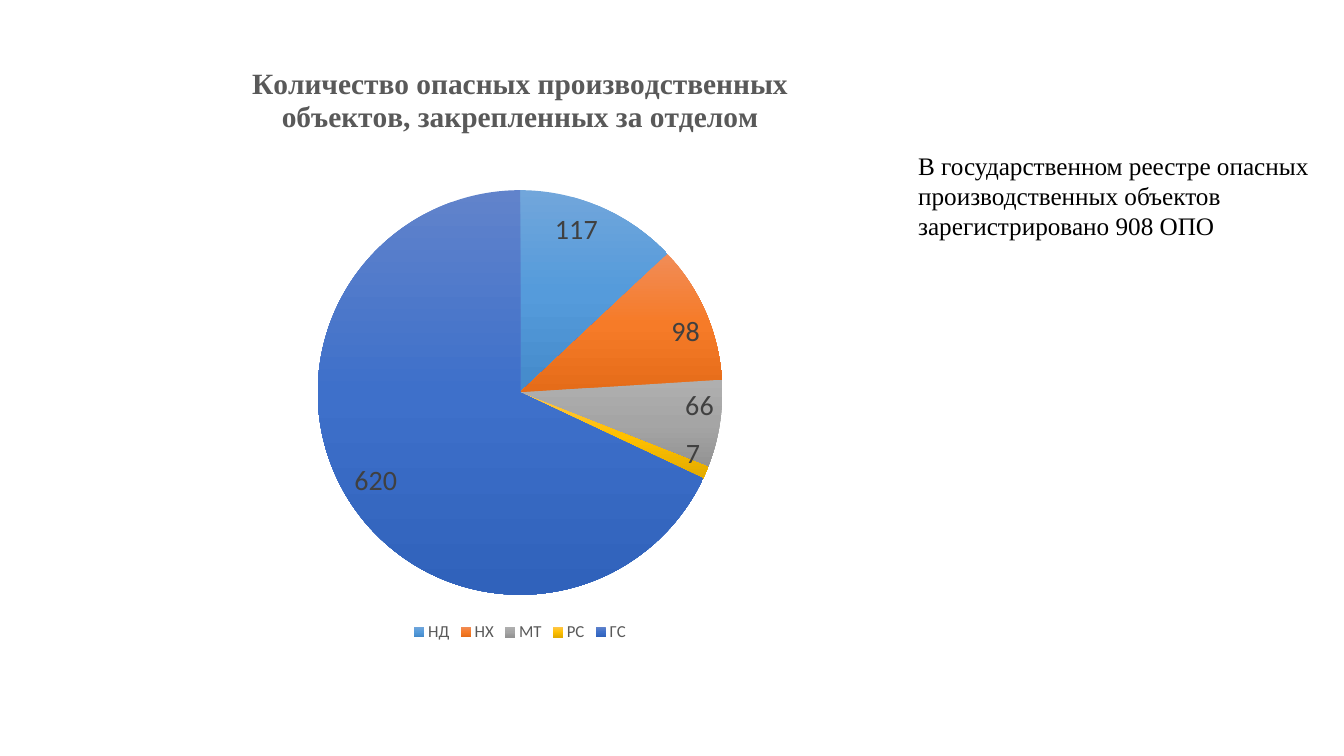
from dataclasses import dataclass

from lxml import etree
from pptx import Presentation
from pptx.chart.chart import Chart
from pptx.chart.data import CategoryChartData
from pptx.dml.color import RGBColor
from pptx.enum import chart as charts
from pptx.oxml import parse_xml
from pptx.oxml.ns import nsdecls, qn
from pptx.slide import Slide
from pptx.util import Pt


@dataclass(frozen=True)
class Theme:
    heading_font: str = "Times New Roman"
    chart_font: str = "Calibri"
    ink: str = "000000"
    muted: str = "595959"
    label: str = "404040"
    title_size: float = 21
    note_size: float = 18
    label_size: float = 20
    legend_size: float = 12


@dataclass(frozen=True)
class Sector:
    name: str
    share: int
    count: str
    gradient: tuple[str, str, str]


THEME = Theme()
TITLE = "Количество опасных производственных объектов, закрепленных за отделом"
NOTE = (
    "В государственном реестре опасных\n"
    "производственных объектов\n"
    "зарегистрировано 908 ОПО"
)
SECTORS = [
    Sector("НД", 13, "117", ("71A6DB", "559BDB", "448ACA")),
    Sector("НХ", 11, "98", ("F18C57", "F67B28", "E56C19")),
    Sector("МТ", 7, "66", ("AFAFAF", "A5A5A5", "939393")),
    Sector("РС", 1, "7", ("FFC64B", "FFC000", "E3AB00")),
    Sector("ГС", 68, "620", ("6183CB", "3E70CA", "3062BB")),
]


def style_font(font, name: str, size: float, color: str, bold: bool = False) -> None:
    font.name = name
    font.size = Pt(size)
    font.bold = bold
    font.color.rgb = RGBColor.from_string(color)


def fill_gradient(point, colors: tuple[str, str, str]) -> None:
    """Fill a sector from top to bottom with evenly spaced colour stops."""
    point.format.line.fill.background()
    point.format.fill.gradient()
    point.format.fill.gradient_angle = 270
    stops = point.format.fill._fill._gradFill.find(qn("a:gsLst"))
    for stop in list(stops):
        stops.remove(stop)
    for index, color in enumerate(colors):
        stop = etree.SubElement(stops, qn("a:gs"), pos=str(index * 50000))
        etree.SubElement(stop, qn("a:srgbClr"), val=color)


def place_plot(chart: Chart, x: float, y: float, w: float, h: float) -> None:
    """Fix the pie's area, in fractions of the chart."""
    plot_area = chart._chartSpace.chart.plotArea
    for layout in plot_area.findall(qn("c:layout")):
        plot_area.remove(layout)
    sizes = "".join(
        f'<c:{tag} val="{value}"/>' for tag, value in zip("xywh", (x, y, w, h))
    )
    plot_area.insert(0, parse_xml(
        f'<c:layout {nsdecls("c")}><c:manualLayout><c:layoutTarget val="inner"/>'
        f'<c:xMode val="edge"/><c:yMode val="edge"/>{sizes}'
        "</c:manualLayout></c:layout>"
    ))


def add_pie(page: Slide) -> None:
    data = CategoryChartData()
    data.categories = [sector.name for sector in SECTORS]
    data.add_series("Series 1", [sector.share for sector in SECTORS])
    chart = page.shapes.add_chart(
        charts.XL_CHART_TYPE.PIE, Pt(70.5), Pt(30.25), Pt(602), Pt(431.25), data
    ).chart
    style_font(chart.font, THEME.chart_font, 10, THEME.ink)

    chart.has_title = True
    title = chart.chart_title.text_frame
    title.text = TITLE
    style_font(title.paragraphs[0].runs[0].font, THEME.heading_font,
               THEME.title_size, THEME.muted, bold=True)
    chart.chart_title.include_in_layout = False

    chart.has_legend = True
    chart.legend.position = charts.XL_LEGEND_POSITION.BOTTOM
    chart.legend.include_in_layout = False
    style_font(chart.legend.font, THEME.chart_font, THEME.legend_size, THEME.muted)

    plot = chart.plots[0]
    plot.vary_by_categories = True
    plot.has_data_labels = True
    plot.data_labels.show_percentage = True
    plot.data_labels.show_value = False
    plot.data_labels.position = charts.XL_LABEL_POSITION.INSIDE_END
    style_font(plot.data_labels.font, THEME.chart_font, THEME.label_size, THEME.label)
    for index, sector in enumerate(SECTORS):
        point = plot.series[0].points[index]
        fill_gradient(point, sector.gradient)
        label = point.data_label
        label.text_frame.text = sector.count
        style_font(label.text_frame.paragraphs[0].runs[0].font,
                   THEME.chart_font, THEME.label_size, THEME.label)
        label.position = charts.XL_LABEL_POSITION.INSIDE_END
    place_plot(chart, 0.26, 0.24, 0.48, 0.68)


def add_note(page: Slide) -> None:
    box = page.shapes.add_textbox(Pt(648.75), Pt(103.75), Pt(301), Pt(72.75))
    frame = box.text_frame
    frame.word_wrap = False
    frame.text = NOTE
    for para in frame.paragraphs:
        style_font(para.runs[0].font, THEME.heading_font, THEME.note_size, THEME.ink)


def main() -> None:
    deck = Presentation()
    deck.slide_width, deck.slide_height = Pt(960), Pt(540)
    page = deck.slides.add_slide(deck.slide_layouts[6])
    add_pie(page)
    add_note(page)
    deck.save("out.pptx")


if __name__ == "__main__":
    main()
